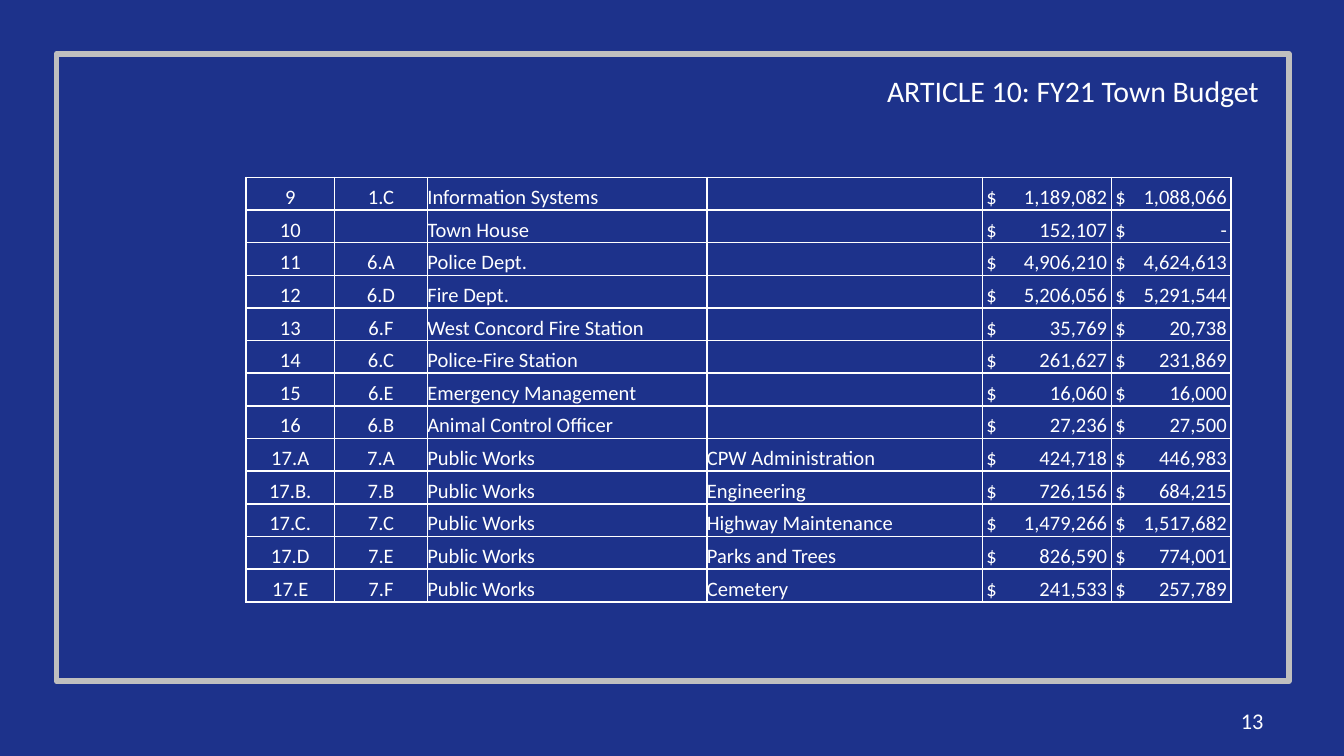
from lxml.etree import SubElement
from pptx import Presentation
from pptx.dml.color import RGBColor
from pptx.enum.shapes import MSO_SHAPE
from pptx.enum.text import MSO_ANCHOR, MSO_AUTO_SIZE, PP_ALIGN
from pptx.oxml import parse_xml
from pptx.oxml.ns import nsdecls, qn
from pptx.util import Inches, Pt

NAVY, WHITE, SILVER = "1D328B", "FFFFFF", "BFBFBF"
SLIDE_WIDTH = 10
SLIDE_HEIGHT = SLIDE_WIDTH * 9 / 16
TITLE = "ARTICLE 10: FY21 Town Budget"
PAGE_NUMBER = "13"
WORKS = "Public Works"
BUDGET = [
    ("9", "1.C", "Information Systems", "", "1,189,082", "1,088,066"),
    ("10", "", "Town House", "", "152,107", "-"),
    ("11", "6.A", "Police Dept.", "", "4,906,210", "4,624,613"),
    ("12", "6.D", "Fire Dept.", "", "5,206,056", "5,291,544"),
    ("13", "6.F", "West Concord Fire Station", "", "35,769", "20,738"),
    ("14", "6.C", "Police-Fire Station", "", "261,627", "231,869"),
    ("15", "6.E", "Emergency Management", "", "16,060", "16,000"),
    ("16", "6.B", "Animal Control Officer", "", "27,236", "27,500"),
    ("17.A", "7.A", WORKS, "CPW Administration", "424,718", "446,983"),
    ("17.B.", "7.B", WORKS, "Engineering", "726,156", "684,215"),
    ("17.C.", "7.C", WORKS, "Highway Maintenance", "1,479,266", "1,517,682"),
    ("17.D", "7.E", WORKS, "Parks and Trees", "826,590", "774,001"),
    ("17.E", "7.F", WORKS, "Cemetery", "241,533", "257,789"),
]
COLUMN_WIDTHS = [0.66, 0.69, 2.08, 2.05, 0.96, 0.89]
CENTRED_COLUMNS, MONEY_COLUMNS = (0, 1), (4, 5)
TABLE_LEFT, TABLE_TOP, TABLE_HEIGHT = 1.83, 1.32, 3.16
MONEY_INSET, MONEY_TAB_GAP = 0.03, 0.06


def color(value):
    return RGBColor.from_string(value)


def add_span(para, text, size):
    span = para.add_run()
    span.text = text
    span.font.size = Pt(size)
    span.font.name = "Calibri"
    span.font.color.rgb = color(WHITE)


def add_borders(cell):
    properties = cell._tc.get_or_add_tcPr()
    for side in ("lnL", "lnR", "lnT", "lnB"):
        properties.append(parse_xml(
            f'<a:{side} {nsdecls("a")} w="{Pt(1)}"><a:solidFill>'
            f'<a:srgbClr val="{WHITE}"/></a:solidFill></a:{side}>'))


def add_right_tab(para, position):
    tabs = SubElement(para._p.get_or_add_pPr(), qn("a:tabLst"))
    SubElement(tabs, qn("a:tab"), pos=str(Inches(position)), algn="r")


def fill_cell(cell, column, text):
    add_borders(cell)
    cell.fill.background()
    cell.margin_left = cell.margin_right = cell.margin_top = cell.margin_bottom = 0
    cell.vertical_anchor = MSO_ANCHOR.BOTTOM
    para = cell.text_frame.paragraphs[0]
    if column in CENTRED_COLUMNS:
        para.alignment = PP_ALIGN.CENTER
    if column in MONEY_COLUMNS:
        cell.margin_left = Inches(MONEY_INSET)
        add_right_tab(para, COLUMN_WIDTHS[column] - MONEY_TAB_GAP)
        text = f"$\t{text}"
    if text:
        add_span(para, text, 11)
    else:
        SubElement(para._p, qn("a:endParaRPr"), sz="1100")


def add_frame(page):
    frame = page.shapes.add_shape(
        MSO_SHAPE.RECTANGLE, Inches(0.42), Inches(0.4), Inches(9.17), Inches(4.67))
    frame.shadow.inherit = False
    frame.fill.background()
    frame.line.color.rgb = color(SILVER)
    frame.line.width = Pt(3)
    SubElement(frame.line._get_or_add_ln(), qn("a:round"))


def add_title(page):
    title = page.shapes.title
    title.left, title.top = Inches(6.5), Inches(0.49)
    title.width, title.height = Inches(3), Inches(0.37)
    title.text_frame.word_wrap = True
    title.text_frame.auto_size = MSO_AUTO_SIZE.SHAPE_TO_FIT_TEXT
    title.text_frame.vertical_anchor = MSO_ANCHOR.TOP
    para = title.text_frame.paragraphs[0]
    para.alignment = PP_ALIGN.LEFT
    add_span(para, TITLE, 16)


def add_page_number(page):
    box = page.shapes.add_textbox(Inches(7.17), Inches(5.21), Inches(2.33), Inches(0.3))
    box.text_frame.word_wrap = True
    box.text_frame.vertical_anchor = MSO_ANCHOR.MIDDLE
    para = box.text_frame.paragraphs[0]
    para.alignment = PP_ALIGN.RIGHT
    add_span(para, PAGE_NUMBER, 12)


def add_budget(page):
    table = page.shapes.add_table(
        len(BUDGET), len(COLUMN_WIDTHS), Inches(TABLE_LEFT), Inches(TABLE_TOP),
        Inches(sum(COLUMN_WIDTHS)), Inches(TABLE_HEIGHT)).table
    table.first_row = table.horz_banding = False
    for column, width in zip(table.columns, COLUMN_WIDTHS):
        column.width = Inches(width)
    for row, entries in enumerate(BUDGET):
        for column, text in enumerate(entries):
            fill_cell(table.cell(row, column), column, text)


def main():
    """Build the town budget slide."""
    deck = Presentation()
    deck.slide_width, deck.slide_height = Inches(SLIDE_WIDTH), Inches(SLIDE_HEIGHT)
    page = deck.slides.add_slide(deck.slide_layouts.get_by_name("Title Only"))
    page.background.fill.solid()
    page.background.fill.fore_color.rgb = color(NAVY)
    add_frame(page)
    add_page_number(page)
    add_title(page)
    add_budget(page)
    deck.save("out.pptx")


if __name__ == "__main__":
    main()
